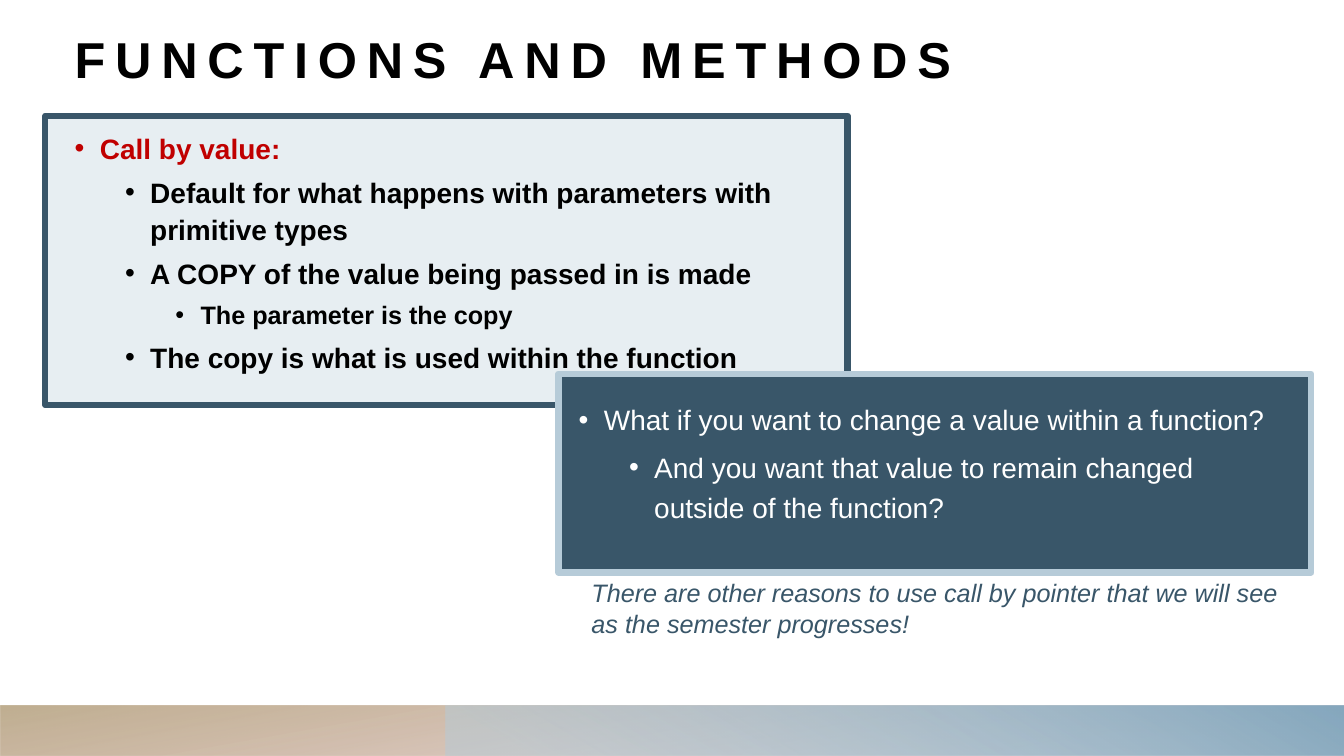
import collections
import dataclasses

import lxml.etree
import pptx
import pptx.dml.color
import pptx.enum.shapes
import pptx.enum.text
import pptx.oxml.ns
import pptx.util

Pt = pptx.util.Pt
Box = collections.namedtuple("Box", "left top width height")
Stop = collections.namedtuple("Stop", "position color opacity")


@dataclasses.dataclass(frozen=True)
class Theme:
    """Colours, type sizes and font shared by the slide."""
    font: str = "Arial"
    black: str = "000000"
    white: str = "FFFFFF"
    red: str = "C00000"
    navy: str = "395669"
    mist: str = "E7EEF2"
    sky: str = "B6CBD8"
    steel: str = "86A8BE"
    clay: str = "BA8B7F"
    sand: str = "B5A17E"
    title_size: int = 36
    body_size: int = 20
    detail_size: int = 18
    border: float = 4.5
    indent: int = 18
    level_step: int = 36


THEME = Theme()


def rgb(color):
    """Turn a hex string into a colour."""
    return pptx.dml.color.RGBColor.from_string(color)


def add_xml(parent, tag, **attributes):
    """Append a drawing element with attributes and return it."""
    element = lxml.etree.SubElement(parent, pptx.oxml.ns.qn(tag))
    for name, value in attributes.items():
        element.set(name, str(value))
    return element


def apply(target, formats):
    """Set each attribute named in a dict of format values."""
    for name, value in formats.items():
        setattr(target, name, value)


def place(shape, box):
    """Move and size a shape to a box given in points."""
    apply(shape, {name: Pt(value) for name, value in box._asdict().items()})


def inset(box, left, top, width, height):
    """Give a box offset from the corner of another box."""
    return Box(box.left + left, box.top + top, width, height)


def bring_to_front(shape):
    """Move a shape to the end of the drawing order."""
    shape.element.getparent().append(shape.element)


def format_runs(paragraph, color, size, **formats):
    """Format every run of a paragraph."""
    for run in paragraph.runs:
        apply(run.font, {"name": THEME.font, "size": Pt(size), **formats})
        run.font.color.rgb = rgb(color)


def prepare_frame(shape, anchor):
    """Strip margins and autofit from a placeholder frame."""
    margins = dict.fromkeys(
        ("margin_left", "margin_top", "margin_right", "margin_bottom"), 0)
    apply(shape.text_frame, {
        **margins, "word_wrap": True, "vertical_anchor": anchor,
        "auto_size": pptx.enum.text.MSO_AUTO_SIZE.NONE})
    return shape.text_frame


def add_rectangle(slide, box):
    """Add a rectangle without a shadow."""
    shape = slide.shapes.add_shape(
        pptx.enum.shapes.MSO_SHAPE.RECTANGLE, *map(Pt, box))
    shape.shadow.inherit = False
    return shape


def add_band(slide, box, stops, angle, rotation=0):
    """Add a mirrored gradient band."""
    band = add_rectangle(slide, box)
    band.rotation = rotation
    band.line.fill.background()
    band.fill.gradient()
    band.fill.gradient_angle = 360 - angle
    for gradient_stop, stop in zip(band.fill.gradient_stops, stops):
        gradient_stop.position = stop.position
        gradient_stop.color.rgb = rgb(stop.color)
    colors = band.element.spPr.iter(pptx.oxml.ns.qn("a:srgbClr"))
    for color, stop in zip(colors, stops):
        add_xml(color, "a:alpha", val=stop.opacity * 1000)
    band.element.spPr.find(pptx.oxml.ns.qn("a:xfrm")).set("flipH", "1")


def add_footer(slide, box):
    """Place the two overlapping footer bands."""
    add_band(slide, box,
             (Stop(0.14, THEME.clay, 28), Stop(1, THEME.sand, 85)), 100, 180)
    start = 318.2
    add_band(slide, inset(box, start, 0, box.width - start, box.height),
             (Stop(0.09, THEME.sky, 55), Stop(0.99, THEME.steel, 100)), 240)


def add_title(slide, box, text):
    """Fill the title placeholder with widely spaced bold text."""
    title = slide.shapes.title
    place(title, box)
    frame = prepare_frame(title, pptx.enum.text.MSO_ANCHOR.BOTTOM)
    frame.text = text
    paragraph = frame.paragraphs[0]
    paragraph.alignment = pptx.enum.text.PP_ALIGN.LEFT
    format_runs(paragraph, THEME.black, THEME.title_size, bold=True)
    paragraph.runs[0].font._element.set("spc", "700")
    bring_to_front(title)


def add_bullets(body, box, items, line_spacing, bold):
    """Fill a body placeholder with (level, text, colour, size) bullets."""
    place(body, box)
    frame = prepare_frame(body, pptx.enum.text.MSO_ANCHOR.TOP)
    frame.text = "\n".join("" for _ in items)
    for paragraph, (level, text, color, size) in zip(frame.paragraphs, items):
        paragraph.text = text
        apply(paragraph, {
            "level": level, "line_spacing": line_spacing,
            "space_before": Pt(5 if level else 10), "space_after": Pt(0),
            "alignment": pptx.enum.text.PP_ALIGN.LEFT})
        properties = paragraph._p.get_or_add_pPr()
        properties.set(
            "marL", str(Pt(THEME.indent + level * THEME.level_step)))
        properties.set("indent", str(-Pt(THEME.indent)))
        add_xml(properties, "a:buFont", typeface=THEME.font)
        add_xml(properties, "a:buChar", char="•")
        format_runs(paragraph, color, size, bold=bold)
    bring_to_front(body)


def add_panel(slide, box, fill, line):
    """Add a bordered panel."""
    panel = add_rectangle(slide, box)
    panel.fill.solid()
    panel.fill.fore_color.rgb = rgb(fill)
    panel.line.color.rgb = rgb(line)
    panel.line.width = Pt(THEME.border)


def add_call_by_value(slide, box, body):
    """Place the light panel that explains call by value."""
    add_panel(slide, box, THEME.mist, THEME.navy)
    items = (
        (0, "Call by value:", THEME.red, THEME.body_size),
        (1, "Default for what happens with parameters with \nprimitive types",
         THEME.black, THEME.body_size),
        (1, "A COPY of the value being passed in is made",
         THEME.black, THEME.body_size),
        (2, "The parameter is the copy", THEME.black, THEME.detail_size),
        (1, "The copy is what is used within the function",
         THEME.black, THEME.body_size))
    add_bullets(body, inset(box, 20.9, 8.6, 856.8, 183.6), items, 1.1, True)


def add_question(slide, box, body):
    """Place the dark panel that asks the follow-up question."""
    add_panel(slide, box, THEME.navy, THEME.sky)
    texts = ("What if you want to change a value within a function?",
             "And you want that value to remain changed "
             "outside of the function?")
    items = [(level, text, THEME.white, THEME.body_size)
             for level, text in enumerate(texts)]
    add_bullets(body, inset(box, 14.4, 15.8, 509, 107.3), items, 1.2, False)


def add_note(slide, box, lines):
    """Place the italic closing remark."""
    frame = slide.shapes.add_textbox(*map(Pt, box)).text_frame
    apply(frame, {"word_wrap": False,
                  "auto_size": pptx.enum.text.MSO_AUTO_SIZE.SHAPE_TO_FIT_TEXT})
    frame.text = "\n".join(lines)
    for paragraph in frame.paragraphs:
        format_runs(paragraph, THEME.navy, THEME.detail_size, italic=True)


def main():
    """Build and save the slide."""
    presentation = pptx.Presentation()
    apply(presentation, {"slide_width": Pt(960), "slide_height": Pt(540)})
    slide = presentation.slides.add_slide(presentation.slide_layouts[3])
    value_body, question_body = list(slide.placeholders)[1:]
    add_footer(slide, Box(0, 504, 960, 36))
    add_title(slide, Box(53.3, 12.2, 676.8, 51.1), "FUNCTIONS AND METHODS")
    add_call_by_value(slide, Box(32.4, 82.8, 573.1, 206.6), value_body)
    add_question(slide, Box(398.9, 267.1, 537.8, 141.8), question_body)
    add_note(slide, Box(415.4, 409, 515.5, 72.7), (
        "There are other reasons to use call by pointer that we will see",
        "as the semester progresses!"))
    presentation.save("out.pptx")


if __name__ == "__main__":
    main()
